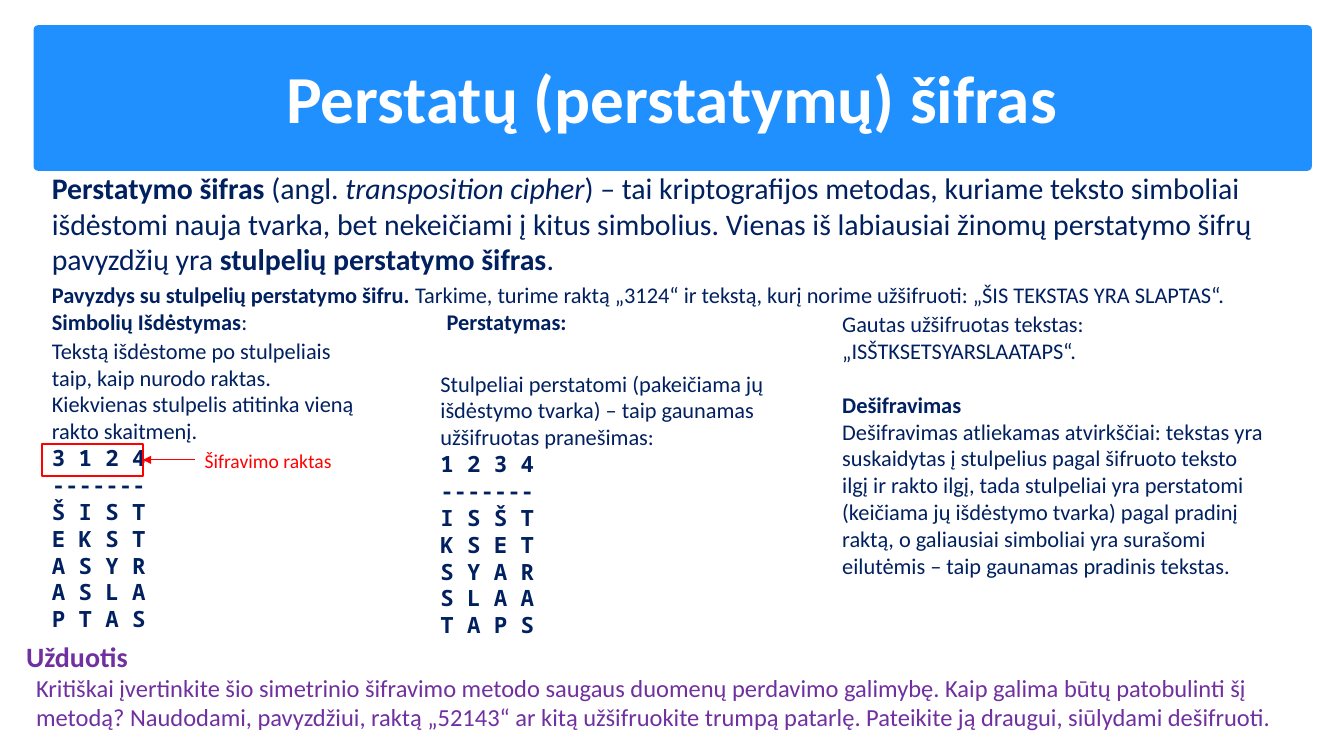
from pptx import Presentation
from pptx.util import Pt
from pptx.dml.color import RGBColor
from pptx.enum.shapes import MSO_SHAPE as Kind, MSO_CONNECTOR as Link
from pptx.enum.text import PP_ALIGN as Align, MSO_ANCHOR as Anchor
from pptx.oxml.ns import qn
from lxml.etree import SubElement as Sub

NAVY, RED, PURPLE = "002060", "FF0000", "7030A0"
MONO = "Noto Sans Mono"

TITLE = "Perstatų (perstatymų) šifras"
INTRO = [[
    ("Perstatymo šifras ", "b"),
    ("(angl. ", ""),
    ("transposition cipher", "i"),
    (") – tai kriptografijos metodas, kuriame teksto simboliai išdėstomi nauja tvarka, "
     "bet nekeičiami į kitus simbolius. Vienas iš labiausiai žinomų perstatymo šifrų "
     "pavyzdžių yra ", ""),
    ("stulpelių perstatymo šifras", "b"),
    (".", ""),
]]
SAMPLE = [
    [("Pavyzdys su stulpelių perstatymo šifru. ", "b"),
     ("Tarkime, turime raktą „3124“ ir tekstą, kurį norime užšifruoti: "
      "„ŠIS TEKSTAS YRA SLAPTAS“.", "")],
    [("Simbolių Išdėstymas", "b"), (":\t", ""), ("Perstatymas:", "b")],
]
LAYOUT = ("Tekstą išdėstome po stulpeliais taip, kaip nurodo raktas. "
          "Kiekvienas stulpelis atitinka vieną rakto skaitmenį.")
SWAP = ("Stulpeliai perstatomi (pakeičiama jų išdėstymo tvarka) – taip gaunamas "
        "užšifruotas pranešimas:")
KEY = "3124"
ROWS = ["ŠIST", "EKST", "ASYR", "ASLA", "PTAS"]
RESULT = [
    "Gautas užšifruotas tekstas:",
    "„ISŠTKSETSYARSLAATAPS“.",
    [("Dešifravimas", "b")],
    "Dešifravimas atliekamas atvirkščiai: tekstas yra suskaidytas į stulpelius pagal "
    "šifruoto teksto ilgį ir rakto ilgį, tada stulpeliai yra perstatomi (keičiama jų "
    "išdėstymo tvarka) pagal pradinį raktą, o galiausiai simboliai yra surašomi "
    "eilutėmis – taip gaunamas pradinis tekstas.",
]
TASK = ("Kritiškai įvertinkite šio simetrinio šifravimo metodo saugaus duomenų perdavimo "
        "galimybę. Kaip galima būtų patobulinti šį metodą? Naudodami, pavyzdžiui, raktą "
        "„52143“ ar kitą užšifruokite trumpą patarlę. Pateikite ją draugui, siūlydami "
        "dešifruoti.")

deck = Presentation()
deck.slide_width, deck.slide_height = Pt(960), Pt(540)
slide = deck.slides.add_slide(deck.slide_layouts[6])
shapes = slide.shapes


def tint(code):
    return RGBColor.from_string(code)


def write(box, paras, size=16, color=NAVY, font="Calibri", style="", align=None):
    frame = box.text_frame
    frame.word_wrap = True
    made = []
    for para in paras:
        first = not frame.paragraphs[0].runs
        line = frame.paragraphs[0] if first else frame.add_paragraph()
        line.alignment = align
        for words, mark in [(para, style)] if isinstance(para, str) else para:
            run = line.add_run()
            run.text = words
            face = run.font
            face.name, face.size = font, Pt(size)
            face.bold, face.italic = "b" in mark, "i" in mark
            face.color.rgb = tint(color)
        made.append(line)
    return made


def place(x, y, w, h):
    return shapes.add_textbox(Pt(x), Pt(y), Pt(w), Pt(h))


def block(kind, x, y, w, h):
    item = shapes.add_shape(kind, Pt(x), Pt(y), Pt(w), Pt(h))
    item.shadow.inherit = False
    return item


def grid(box, lead, order):
    write(box, [lead])
    lines = [" ".join(row[i] for i in order) for row in [KEY] + ROWS]
    lines.insert(1, "-" * len(lines[0]))
    write(box, lines, font=MONO, style="b")


band = block(Kind.ROUNDED_RECTANGLE, 24, 18, 913, 104)
band.adjustments[0] = 0.03
band.fill.solid()
band.fill.fore_color.rgb = tint("2190FF")
band.line.fill.background()

write(place(30, 117.5, 929.5, 85), INTRO, size=21.3)

heads = write(place(30, 197.5, 919, 72), SAMPLE)[1]
stops = Sub(heads._p.get_or_add_pPr(), qn("a:tabLst"))
Sub(stops, qn("a:tab"), pos=str(Pt(282)), algn="l")

span = range(len(KEY))
grid(place(30, 237, 240.5, 220), LAYOUT, span)
grid(place(307.5, 260.5, 279.5, 201), SWAP, sorted(span, key=lambda i: KEY[i]))

write(place(594.5, 218, 317.5, 220), RESULT)[2].space_before = Pt(19.2)

task = place(11.5, 453, 949, 74)
write(task, ["Užduotis"], size=20, color=PURPLE, style="b")
detail = write(task, [TASK], size=17.5, color=PURPLE)[0]
detail._p.get_or_add_pPr().set("marL", str(Pt(7.2)))

title = place(48, 19.5, 864, 98.5)
title.text_frame.vertical_anchor = Anchor.MIDDLE
write(title, [TITLE], size=48, color="FFFFFF", style="b", align=Align.CENTER)

frame = block(Kind.RECTANGLE, 30, 317, 72, 23)
frame.fill.background()
frame.line.color.rgb = tint(RED)
frame.line.width = Pt(1.25)

write(place(139, 317, 132, 24.5), ["Šifravimo raktas"], size=14, color=RED)

arrow = shapes.add_connector(Link.STRAIGHT, Pt(139), Pt(328.5), Pt(102), Pt(328.5))
arrow.end_connect(frame, 3)
arrow.line.color.rgb = tint(RED)
arrow.line.width = Pt(0.75)
Sub(arrow.line._get_or_add_ln(), qn("a:tailEnd"), type="triangle")
Sub(arrow._element.spPr, qn("a:effectLst"))

deck.save("out.pptx")
